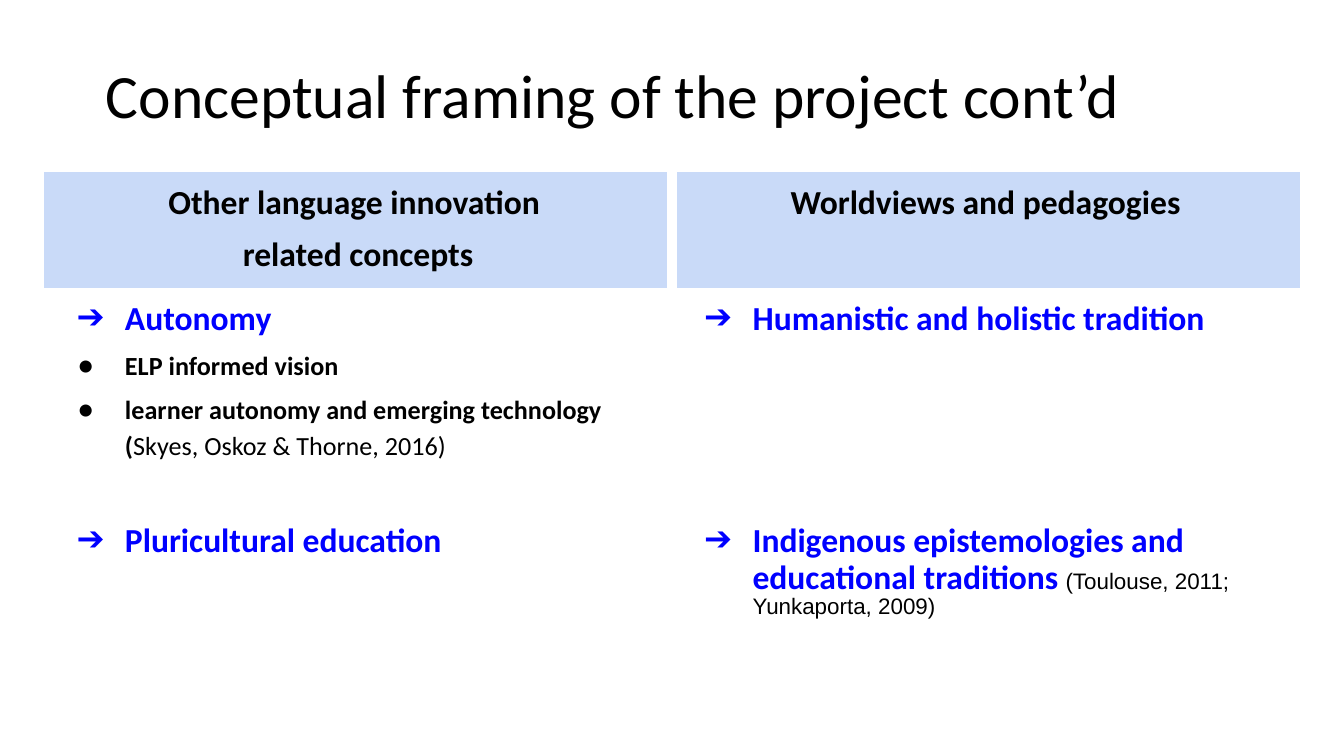
from dataclasses import dataclass

from lxml import etree
from pptx import Presentation
from pptx.dml.color import RGBColor
from pptx.enum.text import MSO_ANCHOR, PP_ALIGN
from pptx.oxml.ns import qn
from pptx.util import Inches, Pt

CENTER, LEFT = PP_ALIGN.CENTER, PP_ALIGN.LEFT
MIDDLE = MSO_ANCHOR.MIDDLE


@dataclass(frozen=True)
class Theme:
    black: str = "000000"
    blue: str = "0000FF"
    header: str = "C9DAF8"
    gap: str = "FFFFFF"
    body_font: str = "Calibri"
    source_font: str = "Arial"
    title_size: int = 33
    heading_size: int = 18
    space_size: int = 16
    detail_size: int = 14
    source_size: int = 12
    gap_width: int = 6


THEME = Theme()


@dataclass(frozen=True)
class Style:
    size: int
    color: str = THEME.black
    bold: bool = True
    font: str = THEME.body_font


@dataclass(frozen=True)
class Layout:
    """Paragraph layout; indents in inches, space before in points."""
    line: float = 0.9
    before: int = 8
    align: PP_ALIGN = LEFT
    margin: float = 0
    hanging: float = 0
    bullet: str = ""
    bullet_color: str = THEME.black


@dataclass(frozen=True)
class Para:
    layout: Layout
    runs: tuple[tuple[str, Style], ...]


TITLE = Style(THEME.title_size, bold=False)
HEADER = Style(THEME.heading_size)
CONCEPT = Style(THEME.heading_size, THEME.blue)
SPACE = Style(THEME.space_size, THEME.blue)
DETAIL = Style(THEME.detail_size)
CITATION = Style(THEME.detail_size, bold=False)
SOURCE = Style(THEME.source_size, bold=False, font=THEME.source_font)

TITLE_LINE = Layout(before=0)
HEADER_LINE = Layout(align=CENTER)
HEADER_HANGING = Layout(align=CENTER, hanging=-0.08)
ARROW = Layout(margin=0.5, hanging=-0.36, bullet="➔", bullet_color=THEME.blue)
DOT = Layout(line=1.15, before=4, margin=0.5, hanging=-0.35, bullet="●")

# Cell contents by row and column
CONCEPTS = (
    (
        (Para(HEADER_LINE, (("Other language innovation ", HEADER),)),
         Para(HEADER_HANGING, (("related concepts", HEADER),))),
        (Para(HEADER_HANGING, (("Worldviews and pedagogies", HEADER),)),),
    ),
    (
        (Para(ARROW, (("Autonomy", CONCEPT), (" ", SPACE))),
         Para(DOT, (("ELP informed vision", DETAIL),)),
         Para(DOT, (("learner autonomy and emerging technology (", DETAIL),
                    ("Skyes, Oskoz & Thorne, 2016)", CITATION)))),
        (Para(ARROW, (("Humanistic and holistic tradition", CONCEPT),)),),
    ),
    (
        (Para(ARROW, (("Pluricultural education", CONCEPT),)),),
        (Para(ARROW, (
            ("Indigenous epistemologies and educational traditions", CONCEPT),
            (" ", SPACE),
            ("(Toulouse, 2011; Yunkaporta, 2009)", SOURCE))),),
    ),
    ((), ()),
)
ROW_HEIGHTS = (0.86, 1.65, 0.83, 0.75)
COLUMN_WIDTH = 4.67


def set_margins(holder) -> None:
    holder.margin_left = holder.margin_right = Inches(0.1)
    holder.margin_top = holder.margin_bottom = Inches(0.1)


def write_paragraphs(frame, paras: tuple[Para, ...]) -> None:
    for index, para in enumerate(paras):
        line = frame.add_paragraph() if index else frame.paragraphs[0]
        layout = para.layout
        line.alignment = layout.align
        line.line_spacing = layout.line
        line.space_before = Pt(layout.before)
        props = line._p.get_or_add_pPr()
        props.set("marL", str(Inches(layout.margin)))
        props.set("indent", str(Inches(layout.hanging)))
        if layout.bullet:
            bullet_size = para.runs[0][1].size
            color = etree.SubElement(props, qn("a:buClr"))
            etree.SubElement(color, qn("a:srgbClr"), val=layout.bullet_color)
            etree.SubElement(props, qn("a:buSzPts"), val=str(bullet_size * 100))
            etree.SubElement(props, qn("a:buFont"), typeface=THEME.body_font)
            etree.SubElement(props, qn("a:buChar"), char=layout.bullet)
        for text, style in para.runs:
            run = line.add_run()
            run.text = text
            run.font.name = style.font
            run.font.size = Pt(style.size)
            run.font.bold = style.bold
            run.font.color.rgb = RGBColor.from_string(style.color)


def set_borders(cell, gap_edge: str) -> None:
    """Paint one edge as the column gap and clear the others."""
    props = cell._tc.get_or_add_tcPr()
    for index, edge in enumerate(("lnL", "lnR", "lnT", "lnB")):
        border = etree.Element(qn(f"a:{edge}"))
        if edge == gap_edge:
            border.set("w", str(Pt(THEME.gap_width)))
            fill = etree.SubElement(border, qn("a:solidFill"))
            etree.SubElement(fill, qn("a:srgbClr"), val=THEME.gap)
        else:
            etree.SubElement(border, qn("a:noFill"))
        props.insert(index, border)


def add_title(slide, text: str) -> None:
    title = slide.shapes.add_textbox(
        Inches(0.69), Inches(0.19), Inches(8.62), Inches(1.09))
    frame = title.text_frame
    frame.word_wrap = True
    frame.vertical_anchor = MIDDLE
    set_margins(frame)
    write_paragraphs(frame, (Para(TITLE_LINE, ((text, TITLE),)),))


def add_concepts(slide) -> None:
    columns = len(CONCEPTS[0])
    table = slide.shapes.add_table(
        len(CONCEPTS), columns, Inches(0.33), Inches(1.28),
        Inches(COLUMN_WIDTH * columns), Inches(sum(ROW_HEIGHTS))).table
    table.first_row = table.horz_banding = False
    for column in table.columns:
        column.width = Inches(COLUMN_WIDTH)
    for row, (height, contents) in enumerate(zip(ROW_HEIGHTS, CONCEPTS)):
        table.rows[row].height = Inches(height)
        for column, paras in enumerate(contents):
            cell = table.cell(row, column)
            set_margins(cell)
            write_paragraphs(cell.text_frame, paras)
            if row == 0:
                cell.fill.solid()
                cell.fill.fore_color.rgb = RGBColor.from_string(THEME.header)
                set_borders(cell, ("lnR", "lnL")[column])
            else:
                cell.fill.background()
                set_borders(cell, "")


def main() -> None:
    deck = Presentation()
    deck.slide_width = Inches(10)
    deck.slide_height = deck.slide_width * 9 // 16
    slide = deck.slides.add_slide(deck.slide_layouts[6])
    add_title(slide, "Conceptual framing of the project cont’d")
    add_concepts(slide)
    deck.save("out.pptx")


if __name__ == "__main__":
    main()
